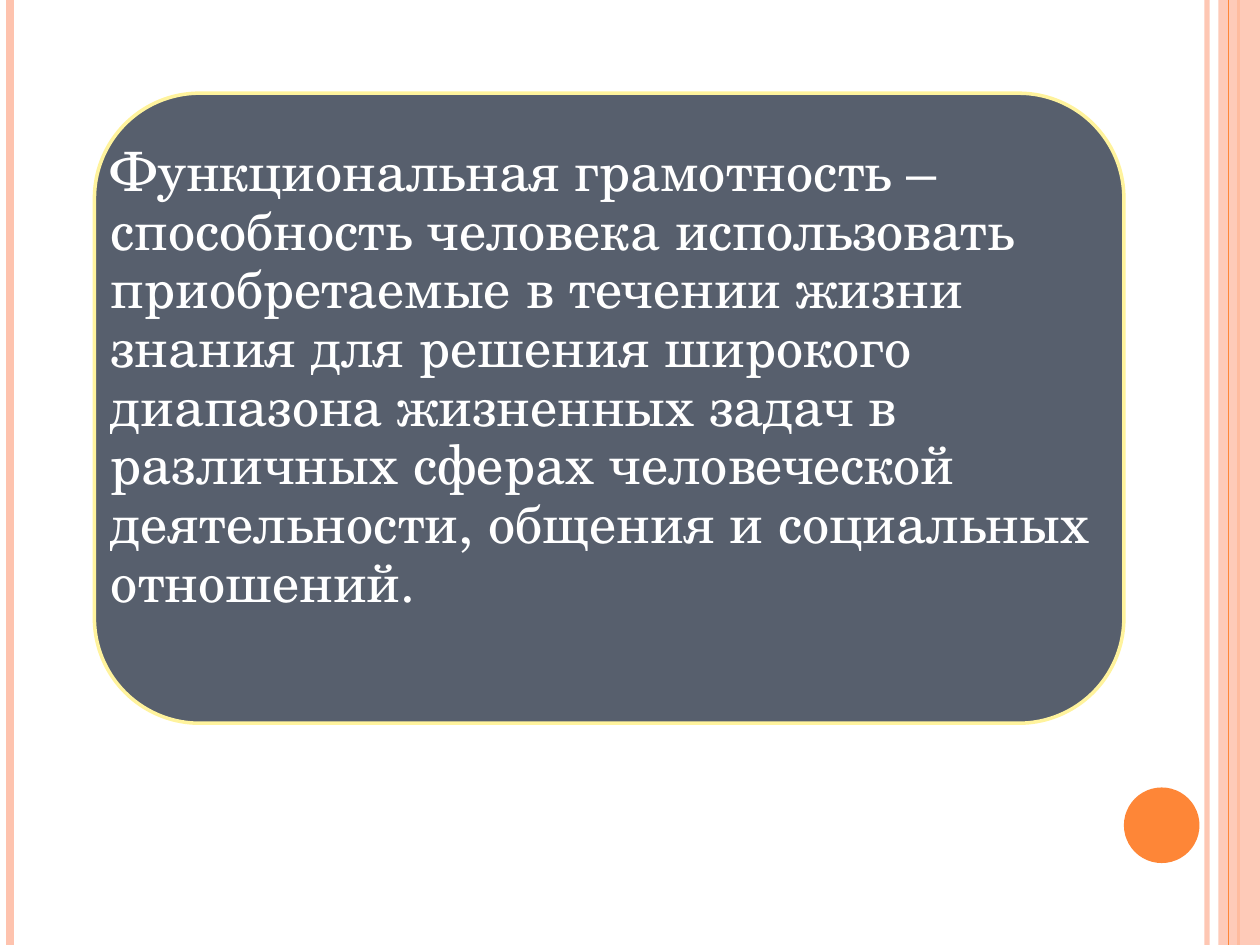
from pptx import Presentation
from pptx.dml.color import RGBColor
from pptx.enum.shapes import MSO_CONNECTOR as LINK, MSO_SHAPE as SHAPE
from pptx.enum.text import MSO_ANCHOR as ANCHOR, PP_ALIGN as ALIGN
from pptx.oxml.ns import qn
from pptx.util import Inches, Pt
from lxml.etree import SubElement

COLORS = {"peach": "FEC3AE", "orange": "FE8637", "slate": "575F6D",
          "yellow": "FFF39D", "white": "FFFFFF"}
WIDTH, HEIGHT = 10, 7.5
DEFINITION = (
    "Функциональная грамотность – способность человека использовать "
    "приобретаемые в течении жизни знания для решения широкого диапазона "
    "жизненных задач в различных сферах человеческой деятельности, общения "
    "и социальных отношений."
)


class SlideStyle:
    font = "TeX Gyre Schola"

    def __init__(self, page):
        self.page = page

    def color(self, name):
        return RGBColor.from_string(COLORS[name])

    def area(self, left, top, width, height):
        return [Inches(value) for value in
                (left * WIDTH, top * HEIGHT, width * WIDTH, height * HEIGHT)]

    def fade(self, fill, percent):
        tint = fill._xPr.find(".//" + qn("a:srgbClr"))
        SubElement(tint, qn("a:alpha"), val=str(percent * 1000))

    def stripe(self, across, color, weight, opacity=100):
        left, top, _, height = self.area(across, 0, 0, 1)
        line = self.page.shapes.add_connector(LINK.STRAIGHT, left, top, left, height)
        line.line.color.rgb = self.color(color)
        line.line.width = Pt(weight)
        if opacity < 100:
            self.fade(line.line.fill, opacity)
        SubElement(line._element.spPr, qn("a:effectLst"))

    def shape(self, kind, place, color, border=None, opacity=100):
        shape = self.page.shapes.add_shape(kind, *self.area(*place))
        shape.shadow.inherit = False
        shape.fill.solid()
        shape.fill.fore_color.rgb = self.color(color)
        if opacity < 100:
            self.fade(shape.fill, opacity)
        if border:
            shape.line.color.rgb = self.color(border)
            shape.line.width = Pt(2)
        else:
            shape.line.fill.background()

    def text(self, place, words, size, color, insets):
        box = self.page.shapes.add_textbox(*self.area(*place))
        frame = box.text_frame
        frame.word_wrap = True
        frame.vertical_anchor = ANCHOR.MIDDLE
        for side, inset in insets.items():
            setattr(frame, f"margin_{side}", Inches(inset))
        para = frame.paragraphs[0]
        for name, value in {"alignment": ALIGN.LEFT, "line_spacing": 0.9}.items():
            setattr(para, name, value)
        span = para.add_run()
        span.text = words
        for name, value in {"name": self.font, "size": Pt(size)}.items():
            setattr(span.font, name, value)
        span.font.color.rgb = self.color(color)


def main():
    deck = Presentation()
    deck.slide_width, deck.slide_height = Inches(WIDTH), Inches(HEIGHT)
    slide = SlideStyle(deck.slides.add_slide(deck.slide_layouts[6]))

    slide.stripe(0.958, "peach", 3, opacity=93)
    slide.stripe(0.008, "peach", 4.5)
    slide.stripe(0.983, "orange", 1.5)
    slide.shape(SHAPE.RECTANGLE, (0.967, 0, 0.033, 1), "peach", opacity=87)
    slide.stripe(0.975, "orange", 0.75)
    slide.shape(SHAPE.OVAL, (0.892, 6.25 / HEIGHT, 0.06, 0.08), "orange")

    card = (0.075, 0.74 / HEIGHT, 0.817, 5 / HEIGHT)
    slide.shape(SHAPE.ROUNDED_RECTANGLE, card, "slate", border="yellow")
    slide.text(card, DEFINITION, 31, "white",
               {"left": 0.13, "top": 0.13, "right": 0.13, "bottom": 0.59})
    deck.save("out.pptx")


if __name__ == "__main__":
    main()
